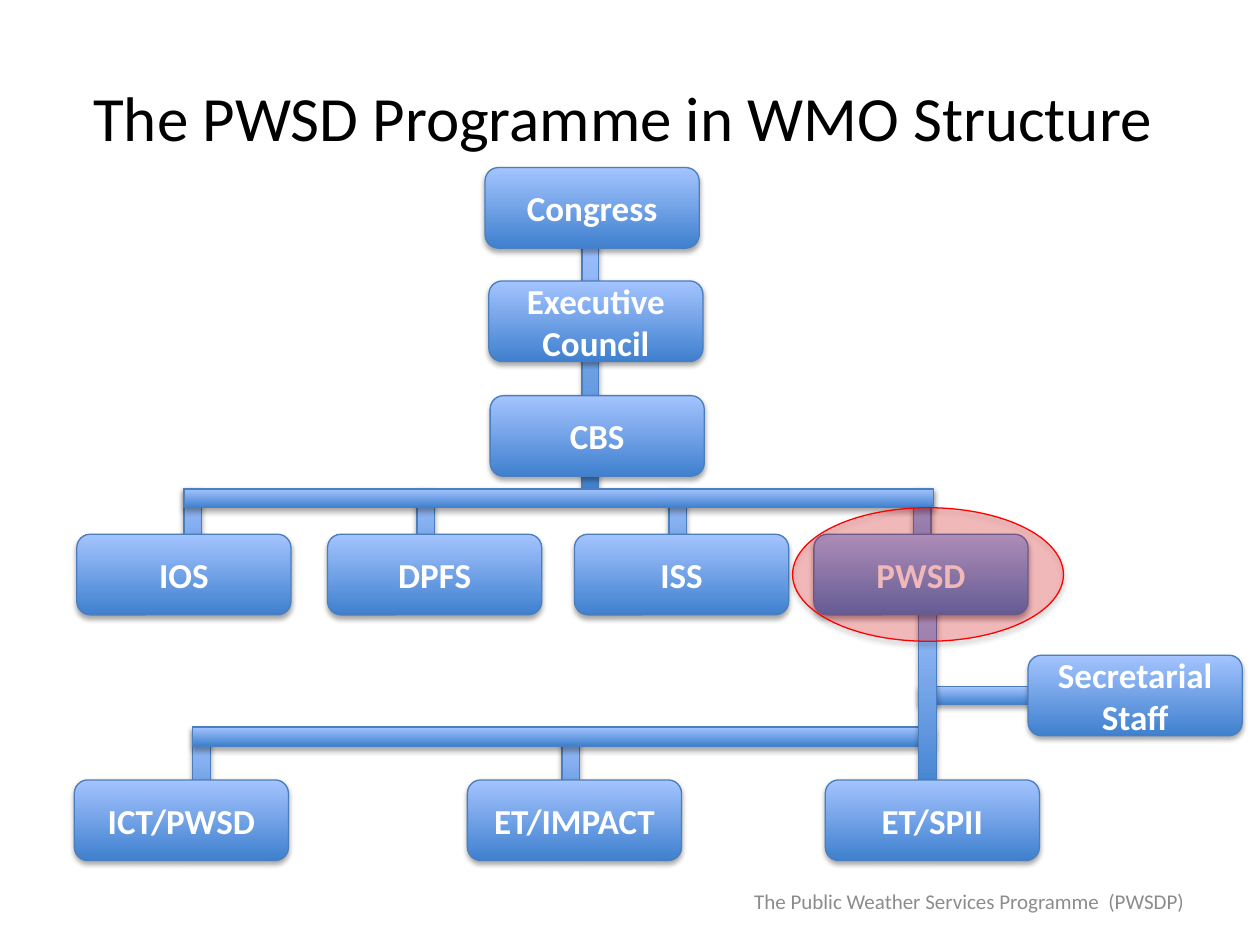
from lxml import etree
from pptx import Presentation
from pptx.dml.color import RGBColor
from pptx.enum.shapes import MSO_SHAPE
from pptx.enum.text import MSO_ANCHOR, PP_ALIGN
from pptx.oxml.ns import qn
from pptx.util import Inches, Pt

BAR, BOX, OVAL = MSO_SHAPE.FLOWCHART_PROCESS, MSO_SHAPE.ROUNDED_RECTANGLE, MSO_SHAPE.OVAL
CENTER, RIGHT, MIDDLE = PP_ALIGN.CENTER, PP_ALIGN.RIGHT, MSO_ANCHOR.MIDDLE

TITLE = "The PWSD Programme in WMO Structure "
FOOTER = "The Public Weather Services Programme  (PWSDP)"
FONT = "Calibri"
COLORS = {
    "dark": "3F80CE", "light": "A4C4FF", "line": "4B7EBC", "highlight": "FF0000",
    "title": "000000", "box_text": "FFFFFF", "footer": "8C8C8C", "shadow": "000000",
}
BOX_W, BOX_H = 1.7, 0.64
STEM_W, STEM_H, BAR_H = 0.14, 0.89, 0.15
COMMISSION_BAR_Y, TEAM_BAR_Y = 3.88, 5.77
STEMS = [
    (TEAM_BAR_Y, [4.46, 1.53]),
    (COMMISSION_BAR_Y, [7.25, 5.31, 3.31, 1.46]),
]
SECRETARIAL_BAR = (7.29, 5.45, 1.37, STEM_W)
TEAM_BAR = (1.53, TEAM_BAR_Y, 5.88, BAR_H)
PWSD_STEM = (7.29, 4.68, STEM_W, 1.69)
TRUNK = (4.62, 1.78, 0.13, 2.18)
COMMISSION_BAR = (1.46, COMMISSION_BAR_Y, 5.95, BAR_H)
HIGHLIGHT = (6.29, 4.03, 2.15, 1.06)
UNITS = [
    (1.33, [("Congress", 3.85)]),
    (2.23, [("Executive Council", 3.88)]),
    (3.14, [("CBS", 3.89)]),
    (4.24, [("IOS", 0.61), ("DPFS", 2.6), ("ISS", 4.56), ("PWSD", 6.46)]),
    (5.2, [("Secretarial Staff", 8.16)]),
    (6.19, [("ET/SPII", 6.55), ("ET/IMPACT", 3.71), ("ICT/PWSD", 0.59)]),
]


def rgb(name):
    return RGBColor.from_string(COLORS[name])


def write(sp, text, size, color, align, bold=False):
    tf = sp.text_frame
    tf.word_wrap = True
    tf.vertical_anchor = MIDDLE
    p = tf.paragraphs[0]
    p.text = text
    p.alignment = align
    p.font.name, p.font.size, p.font.bold = FONT, Pt(size), bold
    p.font.color.rgb = rgb(color)


def add_alpha(color, percent):
    etree.SubElement(color, qn("a:alpha"), val=str(percent * 1000))


def add_shape(slide, kind, box, line="line"):
    sp = slide.shapes.add_shape(kind, *map(Inches, box))
    sp.line.color.rgb = rgb(line)
    sp.line.width = Pt(0.75)
    sp.shadow.inherit = False
    effects = sp._element.spPr.find(qn("a:effectLst"))
    shadow = etree.SubElement(
        effects, qn("a:outerShdw"), blurRad=str(Pt(3.1)), dist=str(Pt(1.8)),
        dir="5400000", rotWithShape="0")
    color = etree.SubElement(shadow, qn("a:srgbClr"), val=COLORS["shadow"])
    add_alpha(color, 35)
    return sp


def add_blue(slide, kind, box):
    sp = add_shape(slide, kind, box)
    sp.fill.gradient()
    sp.fill.gradient_angle = 90
    for stop, name in zip(sp.fill.gradient_stops, ("dark", "light")):
        stop.color.rgb = rgb(name)
    return sp


def main():
    prs = Presentation()
    prs.slide_width, prs.slide_height = Inches(10), Inches(7.5)
    slide = prs.slides.add_slide(prs.slide_layouts[5])

    title = slide.shapes.title
    title.left, title.top, title.width, title.height = map(Inches, (0.5, 0.3, 9, 1.25))
    write(title, TITLE, 36, "title", CENTER)

    for y, lefts in STEMS:
        for x in lefts:
            add_blue(slide, BAR, (x, y, STEM_W, STEM_H))
    for box in (SECRETARIAL_BAR, TEAM_BAR, PWSD_STEM, TRUNK):
        add_blue(slide, BAR, box)

    for y, units in UNITS:
        for name, x in units:
            sp = add_blue(slide, BOX, (x, y, BOX_W, BOX_H))
            write(sp, name, 20, "box_text", CENTER, bold=True)

    add_blue(slide, BAR, COMMISSION_BAR)
    oval = add_shape(slide, OVAL, HIGHLIGHT, "highlight")
    oval.fill.solid()
    oval.fill.fore_color.rgb = rgb("highlight")
    add_alpha(oval._element.spPr.find(qn("a:solidFill")).find(qn("a:srgbClr")), 22)

    footer = slide.shapes.add_textbox(*map(Inches, (5.51, 6.95, 3.99, 0.4)))
    write(footer, FOOTER, 12, "footer", RIGHT)
    prs.save("out.pptx")


if __name__ == "__main__":
    main()
